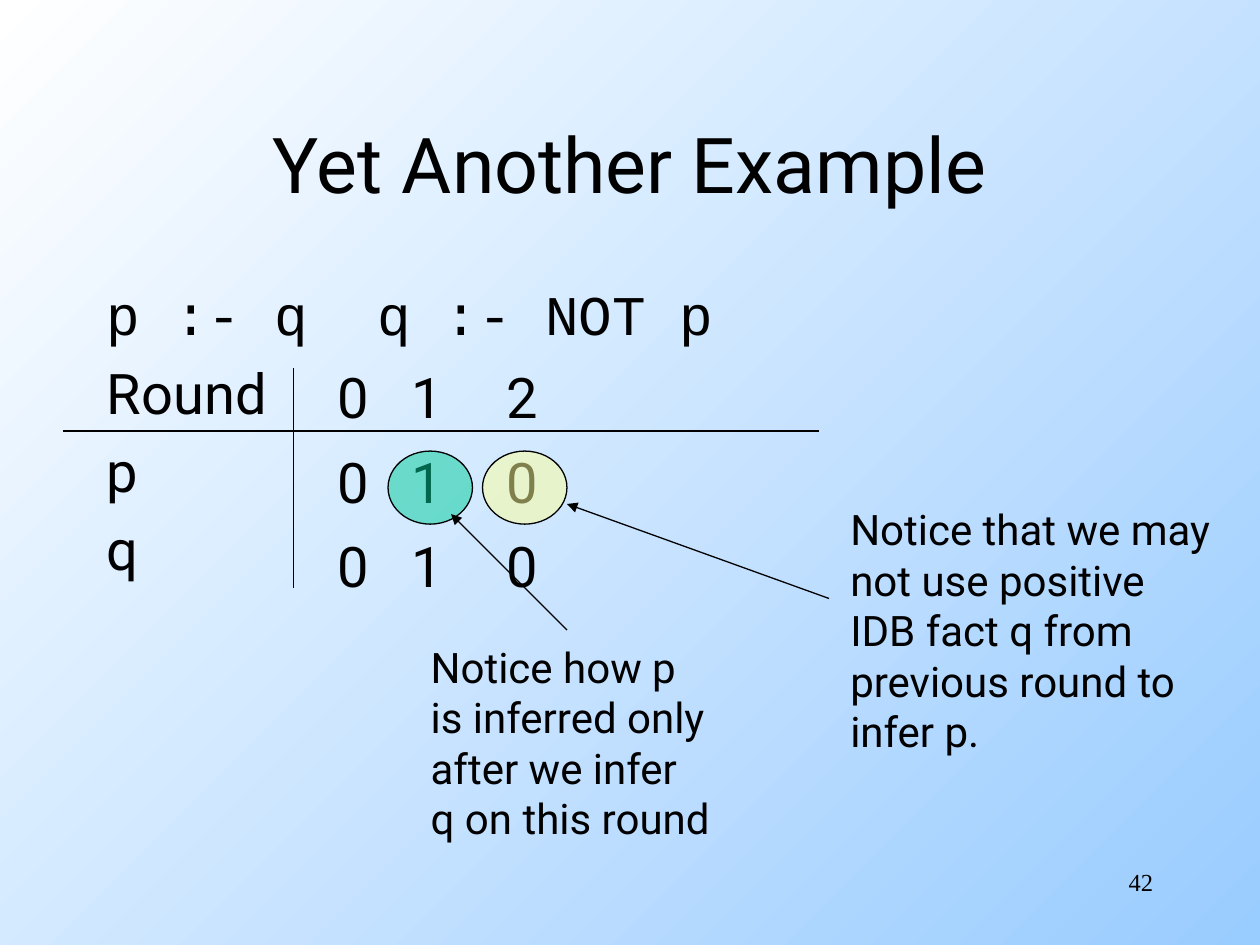
from lxml.etree import SubElement
from pptx import Presentation
from pptx.dml.color import RGBColor
from pptx.enum.shapes import MSO_CONNECTOR as Connector, MSO_SHAPE as Shape
from pptx.enum.text import MSO_ANCHOR as Anchor, MSO_AUTO_SIZE as Fit, PP_ALIGN as Align
from pptx.oxml.ns import qn
from pptx.util import Inches, Pt

# Content
TITLE = "Yet Another Example"
RULES = "p :- q\t q :- NOT p"
ROW_LABELS = ["Round", "p", "q"]
PAGE = "42"
ROUNDS = [  # left edge, values from top to bottom
    (2.58, "000"),
    (3.17, "111"),
    (3.92, "200"),
]
CALLOUTS = {  # keyed by the round whose p value is marked
    1: dict(fill="00CC99", at=(3.32, 5.04, 2.44, 1.7), arrow=(4.5, 5, 3.58, 4.08),
            lines=["Notice how p", "is inferred only", "after we infer", "q on this round"]),
    2: dict(fill="FFFF99", at=(6.65, 3.95, 3.06, 2.1), arrow=(6.58, 4.75, 4.5, 4),
            lines=["Notice that we may", "not use positive", "IDB fact q from",
                   "previous round to", "infer p."]),
}
RULED_LINES = [(0.5, 3.42, 6.5, 3.42), (2.33, 2.92, 2.33, 4.67)]

# Grid and style
WIDTH, HEIGHT = 10, 7.5
MARGIN = 0.75
GRID_TOP, ROW_STEP = 2.83, 0.67
INK, SANS, MONO, SERIF = "000000", "Roboto", "Courier New", "Times New Roman"


def color(hex_code):
    return RGBColor.from_string(hex_code)


def inches(values):
    return [Inches(value) for value in values]


def write(frame, lines, size, font=SANS, align=Align.LEFT):
    frame.text = "\n".join(lines)
    for paragraph in frame.paragraphs:
        paragraph.alignment = align
        for run in paragraph.runs:
            run.font.size, run.font.name = Pt(size), font
            run.font.color.rgb = color(INK)


def add_text(shapes, at, lines, size, wrap=False, **style):
    frame = shapes.add_textbox(*inches(at)).text_frame
    write(frame, lines, size, **style)
    frame.word_wrap = wrap
    frame.auto_size = Fit.NONE if wrap else Fit.SHAPE_TO_FIT_TEXT
    return frame


def add_line(shapes, ends, arrow=False):
    line = shapes.add_connector(Connector.STRAIGHT, *inches(ends))
    line.line.color.rgb, line.line.width = color(INK), Pt(0.75)
    if arrow:
        SubElement(line.line._get_or_add_ln(), qn("a:tailEnd"), type="triangle")
    SubElement(line._element.spPr, qn("a:effectLst"))


def add_callout(shapes, left, callout):
    # Half-transparent ellipse over the p value, its note and its arrow
    group = shapes.add_group_shape().shapes
    mark = group.add_shape(Shape.OVAL, *inches((left - 0.09, 3.58, 0.67, 0.58)))
    mark.shadow.inherit = False
    mark.fill.solid()
    mark.fill.fore_color.rgb = color(callout["fill"])
    SubElement(mark._element.spPr.find(".//" + qn("a:srgbClr")), qn("a:alpha"), val="50000")
    mark.line.color.rgb, mark.line.width = color(INK), Pt(0.75)
    add_text(group, callout["at"], callout["lines"], 24)
    add_line(group, callout["arrow"], arrow=True)


def main():
    deck = Presentation()
    deck.slide_width, deck.slide_height = inches((WIDTH, HEIGHT))
    slide = deck.slides.add_slide(deck.slide_layouts[5])
    shapes = slide.shapes

    # Diagonal background; the angle counts counter-clockwise
    backdrop = slide.background.fill
    backdrop.gradient()
    backdrop.gradient_angle = 315
    for stop, position, shade in zip(backdrop.gradient_stops, (0, 1), ("FFFFFF", "99CCFF")):
        stop.position, stop.color.rgb = position, color(shade)

    # Page number and title
    add_text(shapes, (7.17, 6.83, 2.08, 0.5), [PAGE], 14, wrap=True, font=SERIF, align=Align.RIGHT)
    title = shapes.title
    title.left, title.top, title.width, title.height = inches(
        (MARGIN, 0.67, WIDTH - 2 * MARGIN, 1.25))
    write(title.text_frame, [TITLE], 44, align=Align.CENTER)
    title.text_frame.vertical_anchor = Anchor.MIDDLE
    title.text_frame.auto_size = Fit.NONE

    # Rules and row labels
    body = add_text(shapes, (MARGIN, 2.17, WIDTH - 2 * MARGIN, 4.5),
                    [RULES, *ROW_LABELS], 32, wrap=True)
    for paragraph in body.paragraphs:
        paragraph.space_before = Pt(6.4)
        properties = paragraph._p.get_or_add_pPr()
        properties.set("marL", str(Inches(0.38)))
        properties.set("indent", str(-Inches(0.38)))
    for run in body.paragraphs[0].runs:
        run.font.name = MONO

    # Ruled lines, then the values of each round with its callout
    for ends in RULED_LINES:
        add_line(shapes, ends)
    for number, (left, values) in enumerate(ROUNDS):
        column = shapes.add_group_shape().shapes
        for row, value in enumerate(values):
            add_text(column, (left, GRID_TOP + row * ROW_STEP, 0.44, 0.63), [value], 32)
        if number in CALLOUTS:
            add_callout(shapes, left, CALLOUTS[number])

    deck.save("out.pptx")


if __name__ == "__main__":
    main()
